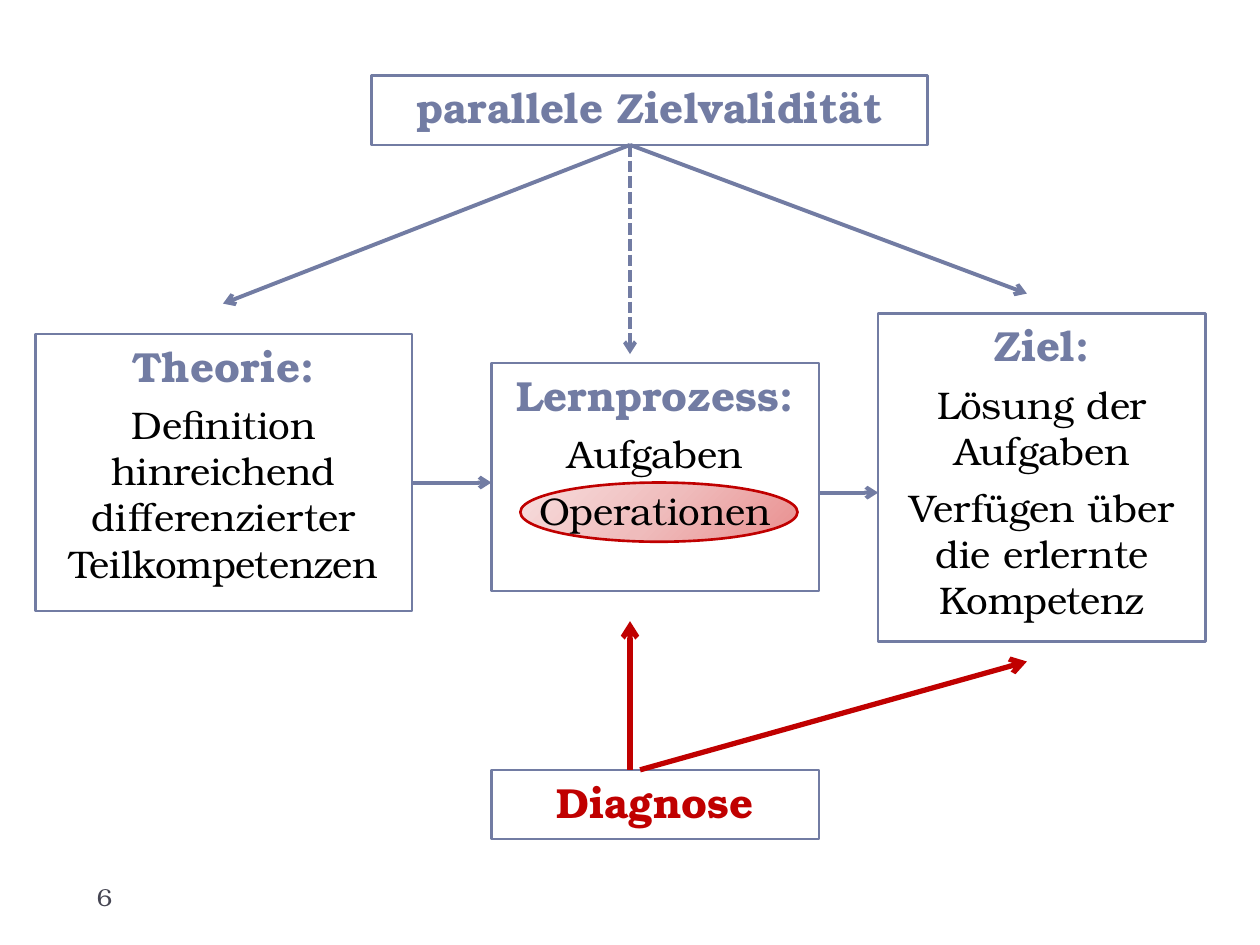
from copy import deepcopy
from dataclasses import dataclass
from typing import Optional

from lxml import etree
from pptx import Presentation
from pptx import util as u
from pptx.dml.color import RGBColor
from pptx.enum import dml, shapes, text
from pptx.oxml import ns

COLS, ROWS = 100, 75
WIDTH, HEIGHT = u.Inches(10), u.Inches(7.5)
FONT = "TeX Gyre Bonum"
BLUE = RGBColor(0x72, 0x7C, 0xA3)
RED = RGBColor(0xC0, 0x00, 0x00)
BLACK = RGBColor(0x00, 0x00, 0x00)
GREY = RGBColor(0x46, 0x46, 0x53)
GLOW = ((0, RGBColor(0xE9, 0x8F, 0x8F)), (0.5, RGBColor(0xEF, 0xBC, 0xBC)),
        (1, RGBColor(0xF7, 0xDE, 0xDE)))
HUB = (50, 11.5)


@dataclass(frozen=True)
class Box:
    """A framed box with a bold heading, placed in columns and rows."""
    col: float
    row: float
    cols: float
    rows: float
    heading: str
    body: tuple[str, ...] = ()
    color: RGBColor = BLUE


@dataclass(frozen=True)
class Arrow:
    """An arrow between two (column, row) points."""
    start: tuple[float, float]
    end: tuple[float, float]
    color: RGBColor = BLUE
    width: float = 2.25
    dash: Optional[dml.MSO_LINE] = None


BOXES = (
    Box(2.8, 26.5, 29.9, 22, "Theorie:",
        ("Definition hinreichend differenzierter Teilkompetenzen",)),
    Box(39, 28.8, 26, 18.1, "Lernprozess:", ("Aufgaben", "Operationen")),
    Box(69.7, 24.9, 26, 26, "Ziel:",
        ("Lösung der Aufgaben", "Verfügen über die erlernte Kompetenz")),
    Box(39, 61.1, 26, 5.5, "Diagnose", color=RED),
    Box(29.5, 6, 44.1, 5.5, "parallele Zielvalidität"),
)
ARROWS = (
    Arrow((50, 61.1), (50, 49.3), RED, 3),
    Arrow((50.8, 61.1), (81.5, 52.5), RED, 3),
    Arrow((32.7, 38.3), (39, 38.3)),
    Arrow((65, 39.1), (69.7, 39.1)),
    Arrow(HUB, (17.7, 24.1)),
    Arrow(HUB, (50, 28.1), dash=dml.MSO_LINE.SQUARE_DOT),
    Arrow(HUB, (81.5, 23.3)),
)


def x(cols: float) -> int:
    """Turn columns into a length."""
    return round(WIDTH * cols / COLS)


def y(rows: float) -> int:
    """Turn rows into a length."""
    return round(HEIGHT * rows / ROWS)


def apply(obj, **values) -> None:
    """Set attributes from format values."""
    for name, value in values.items():
        setattr(obj, name, value)


def write(p, words: str, size: float, color: RGBColor, bold: bool = False) -> None:
    """Add one formatted run to a paragraph."""
    r = p.add_run()
    r.text = words
    apply(r.font, name=FONT, size=u.Pt(size), bold=bold)
    r.font.color.rgb = color


def add_outline(s, kind, col: float, row: float, cols: float, rows: float,
                color: RGBColor):
    """Add an unfilled shape with a thin outline."""
    sp = s.shapes.add_shape(kind, x(col), y(row), x(cols), y(rows))
    sp.shadow.inherit = False
    sp.fill.background()
    sp.line.color.rgb = color
    sp.line.width = u.Pt(1.5)
    return sp


def add_highlight(s) -> None:
    """Add the shaded ellipse behind the word Operationen."""
    sp = add_outline(s, shapes.MSO_SHAPE.OVAL, 41.3, 38.3, 22, 4.7, RED)
    sp.fill.gradient()
    sp.fill.gradient_angle = 135
    first = sp._element.spPr.find(".//" + ns.qn("a:gs"))
    first.addnext(deepcopy(first))
    for stop, (position, color) in zip(sp.fill.gradient_stops, GLOW):
        stop.position = position
        stop.color.rgb = color


def add_box(s, box: Box) -> None:
    """Add a box with its heading and body paragraphs."""
    sp = add_outline(s, shapes.MSO_SHAPE.RECTANGLE, box.col, box.row,
                     box.cols, box.rows, BLUE)
    tf = sp.text_frame
    apply(tf, word_wrap=True, vertical_anchor=text.MSO_ANCHOR.TOP)
    for i, words in enumerate((box.heading, *box.body)):
        p = tf.add_paragraph() if i else tf.paragraphs[0]
        apply(p, alignment=text.PP_ALIGN.CENTER, space_before=u.Pt(6))
        if i:
            write(p, words, 22, BLACK)
        else:
            write(p, words, 24, box.color, True)


def add_arrow(s, arrow: Arrow) -> None:
    """Add a straight line with an open arrowhead at its end."""
    (x1, y1), (x2, y2) = arrow.start, arrow.end
    sp = s.shapes.add_connector(shapes.MSO_CONNECTOR.STRAIGHT,
                                x(x1), y(y1), x(x2), y(y2))
    sp.line.color.rgb = arrow.color
    apply(sp.line, width=u.Pt(arrow.width), dash_style=arrow.dash)
    etree.SubElement(sp.line._get_or_add_ln(), ns.qn("a:tailEnd"), type="arrow")
    etree.SubElement(sp._element.spPr, ns.qn("a:effectLst"))


def add_page_number(s) -> None:
    """Add the page number at the lower left."""
    tf = s.shapes.add_textbox(x(6.7), y(69.5), x(21.7), y(4)).text_frame
    tf.word_wrap = True
    write(tf.paragraphs[0], "6", 14, GREY)


def main() -> None:
    """Build the slide and save it."""
    prs = Presentation()
    apply(prs, slide_width=WIDTH, slide_height=HEIGHT)
    s = prs.slides.add_slide(prs.slide_layouts[6])
    add_highlight(s)
    add_page_number(s)
    for box in BOXES:
        add_box(s, box)
    for arrow in ARROWS:
        add_arrow(s, arrow)
    prs.save("out.pptx")


if __name__ == "__main__":
    main()
